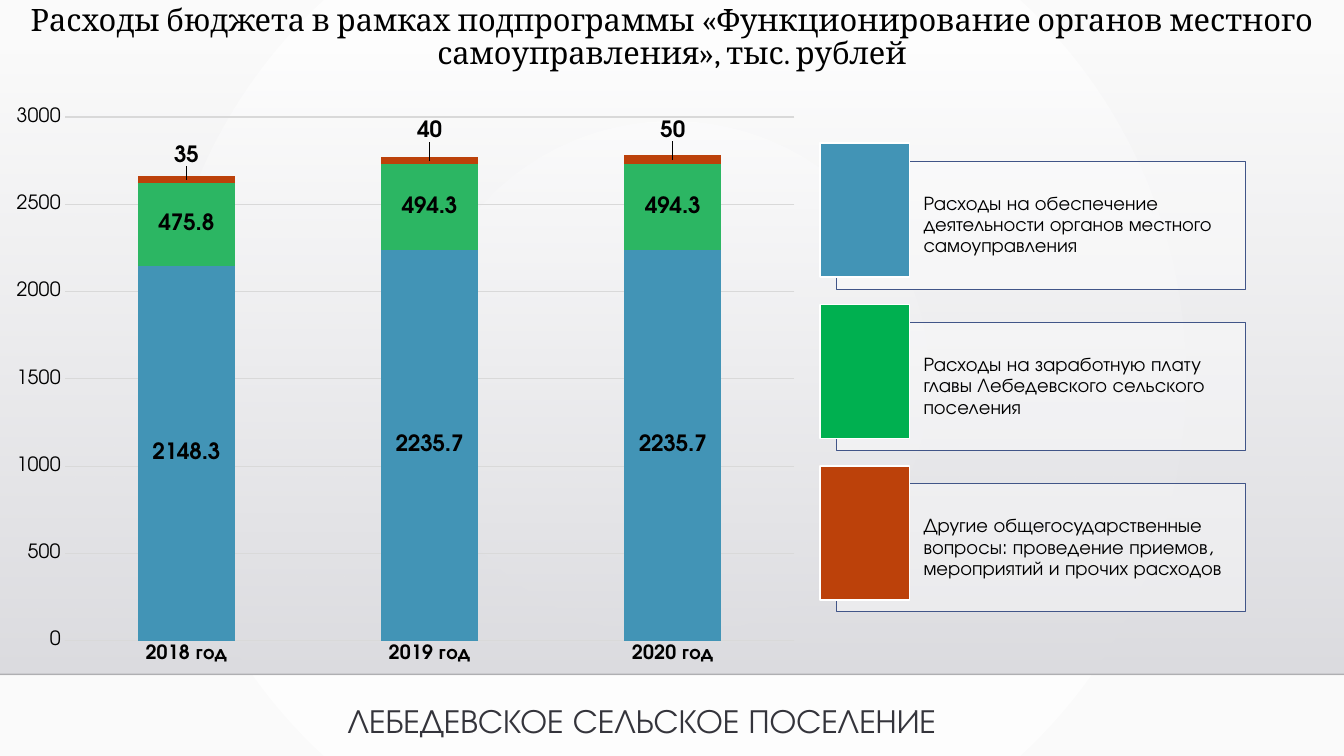
from pptx import Presentation, util as u
from pptx.chart.data import CategoryChartData
from pptx.dml.color import RGBColor
from pptx.enum import chart as ch, shapes as sh, text as tx
from pptx.oxml import parse_xml
from pptx.oxml.ns import nsdecls

TITLE = ("Расходы бюджета в рамках подпрограммы «Функционирование органов местного "
         "самоуправления», тыс. рублей")
FOOTER = "ЛЕБЕДЕВСКОЕ СЕЛЬСКОЕ ПОСЕЛЕНИЕ"
YEARS = ["2018 год", "2019 год", "2020 год"]
SERIES = [  # name, values, bar colour
    ("Series 1", (2148.3, 2235.7, 2235.7), "4294B6"),
    ("Series 2", (475.8, 494.3, 494.3), "2CB663"),
    ("Series 3", (35, 40, 50), "BC410A"),
]
TOP_LABEL_SHIFTS = (-0.04, -0.05, -0.05)  # share of chart height
PLOT_AREA = {"x": 0.08, "y": 0.035, "w": 0.9, "h": 0.902}
LEGEND = [
    ("Расходы на обеспечение деятельности органов местного самоуправления", "4294B6"),
    ("Расходы на заработную плату главы Лебедевского сельского поселения", "00B050"),
    ("Другие общегосударственные вопросы: проведение приемов, мероприятий и прочих расходов",
     "BC410A"),
]


class Theme:
    serif, sans = "Cambria", "TeX Gyre Adventor"
    black, white, footer = "000000", "FFFFFF", "34343B"
    grid, card_line, rule = "D9D9D9", "415588", "000001"
    title_size, footer_size, label_size, body_size = 22, 24, 16, 14


def set_all(target, **values):
    for name, value in values.items():
        setattr(target, name, value)


def style_font(font, size, color=Theme.black, name=Theme.sans, bold=False):
    set_all(font, size=u.Pt(size), name=name, bold=bold)
    font.color.rgb = RGBColor.from_string(color)


def paint(fill, color):
    fill.solid()
    fill.fore_color.rgb = RGBColor.from_string(color)


def stroke(line, color, width):
    paint(line.fill, color)
    line.width = u.Pt(width)


def set_alpha(element, xpath, percent):
    element.xpath(xpath)[0].append(
        parse_xml(f'<a:alpha {nsdecls("a")} val="{percent * 1000}"/>'))


def use_gradient(solid, stops, direction):
    """Swap a solid fill element for a gradient of (position, colour, opacity) stops."""
    marks = "".join(
        f'<a:gs pos="{pos * 1000}"><a:srgbClr val="{color}">'
        f'<a:alpha val="{opacity * 1000}"/></a:srgbClr></a:gs>'
        for pos, color, opacity in stops)
    gradient = parse_xml(f'<a:gradFill {nsdecls("a")} rotWithShape="1">'
                         f'<a:gsLst>{marks}</a:gsLst>{direction}</a:gradFill>')
    solid.getparent().replace(solid, gradient)


def manual_layout(**values):
    """Chart layout element; an inner plot area when it has a width."""
    inner = '<c:layoutTarget val="inner"/>' if "w" in values else ""
    modes = '<c:xMode val="edge"/><c:yMode val="edge"/>' if inner else ""
    sizes = "".join(f'<c:{key} val="{value}"/>' for key, value in values.items())
    return parse_xml(f'<c:layout {nsdecls("c")}><c:manualLayout>{inner}{modes}{sizes}'
                     '</c:manualLayout></c:layout>')


def add_box(slide, left, top, width, height, color):
    box = slide.shapes.add_shape(sh.MSO_SHAPE.RECTANGLE, *map(u.Inches, (left, top, width, height)))
    box.shadow.inherit = False
    paint(box.fill, color)
    return box


def add_backdrop(slide):
    paint(slide.background.fill, Theme.white)
    use_gradient(slide.element.xpath("p:cSld/p:bg/p:bgPr/a:solidFill")[0],
                 [(0, "FFFFFF", 100), (100, "FAFAFA", 100)],
                 '<a:path path="circle"><a:fillToRect l="50000" t="50000" r="50000" b="50000"/>'
                 '</a:path>')
    panel = add_box(slide, 0, 0.51, 13.33, 6.18, Theme.white)
    panel.line.fill.background()
    use_gradient(panel.element.xpath("p:spPr/a:solidFill")[0],
                 [(0, "DCDCE0", 0), (100, "DEDEE2", 100)], '<a:lin ang="5400000" scaled="0"/>')
    rule = slide.shapes.add_connector(sh.MSO_CONNECTOR.STRAIGHT,
                                      *map(u.Inches, (0, 6.69, 13.33, 6.69)))
    stroke(rule.line, Theme.rule, 1)
    set_alpha(rule.element, "p:spPr/a:ln/a:solidFill/a:srgbClr", 20)
    rule.element.spPr.append(parse_xml(f'<a:effectLst {nsdecls("a")}/>'))


def add_title(slide):
    title = slide.shapes.title
    set_all(title, left=0, top=0, width=u.Inches(13.33), height=u.Inches(0.96))
    slide.shapes.element.append(title.element)  # in front of the backdrop
    frame = title.text_frame
    set_all(frame, text=TITLE, word_wrap=True, vertical_anchor=tx.MSO_ANCHOR.TOP)
    para = frame.paragraphs[0]
    set_all(para, alignment=tx.PP_ALIGN.CENTER, line_spacing=0.9)
    style_font(para.runs[0].font, Theme.title_size, name=Theme.serif)


def add_footer(slide):
    box = slide.shapes.add_textbox(*map(u.Inches, (3.35, 6.89, 6.64, 0.5)))
    frame = box.text_frame
    set_all(frame, text=FOOTER, word_wrap=False, auto_size=tx.MSO_AUTO_SIZE.SHAPE_TO_FIT_TEXT)
    style_font(frame.paragraphs[0].runs[0].font, Theme.footer_size, Theme.footer)


def add_legend(slide):
    for row, (label, color) in enumerate(LEGEND):
        top = 1.6 + 1.6 * row
        card = add_box(slide, 8.3, top, 4.05, 1.27, Theme.white)
        set_alpha(card.element, "p:spPr/a:solidFill/a:srgbClr", 40)
        stroke(card.line, Theme.card_line, 0.75)
        frame = card.text_frame
        inset = u.Inches(0.06)
        set_all(frame, text=label, word_wrap=True, vertical_anchor=tx.MSO_ANCHOR.MIDDLE,
                margin_left=u.Inches(0.86), margin_right=inset,
                margin_top=inset, margin_bottom=inset)
        para = frame.paragraphs[0]
        set_all(para, alignment=tx.PP_ALIGN.LEFT, line_spacing=0.9)
        style_font(para.runs[0].font, Theme.body_size)
        swatch = add_box(slide, 8.13, top - 0.18, 0.89, 1.33, color)
        stroke(swatch.line, Theme.white, 1.25)


def style_axes(chart):
    years, amounts = chart.category_axis, chart.value_axis
    for axis, bold in ((years, True), (amounts, False)):
        set_all(axis, major_tick_mark=ch.XL_TICK_MARK.NONE, minor_tick_mark=ch.XL_TICK_MARK.NONE)
        style_font(axis.tick_labels.font, Theme.body_size, bold=bold)
    set_all(amounts, minimum_scale=0, maximum_scale=3000, major_unit=500)
    amounts.format.line.fill.background()
    for line in (years.format.line, amounts.major_gridlines.format.line):
        stroke(line, Theme.grid, 0.75)


def add_spending_chart(slide):
    data = CategoryChartData()
    data.categories = YEARS
    for name, values, _ in SERIES:
        data.add_series(name, values)
    chart = slide.shapes.add_chart(ch.XL_CHART_TYPE.COLUMN_STACKED,
                                   *map(u.Inches, (0, 0.96, 8.04, 5.76)), data).chart
    set_all(chart, has_legend=False, has_title=False)
    style_font(chart.font, Theme.body_size)
    style_axes(chart)
    plot = chart.plots[0]
    set_all(plot, gap_width=150, overlap=100, vary_by_categories=False)
    for series, (_, _, color) in zip(plot.series, SERIES):
        paint(series.format.fill, color)
        labels = series.data_labels
        set_all(labels, show_value=True, position=ch.XL_LABEL_POSITION.CENTER)
        style_font(labels.font, Theme.label_size, bold=True)

    top_series = plot.series[-1]
    for index, shift in enumerate(TOP_LABEL_SHIFTS):
        label = top_series.points[index].data_label
        style_font(label.font, Theme.label_size, bold=True)
        label.position = ch.XL_LABEL_POSITION.CENTER
    for mark, shift in zip(top_series.data_labels._element.xpath("c:dLbl"), TOP_LABEL_SHIFTS):
        mark.insert(1, manual_layout(x=0, y=shift))

    area = chart.element.xpath("c:chart/c:plotArea")[0]
    for old in area.xpath("c:layout"):
        area.remove(old)
    area.insert(0, manual_layout(**PLOT_AREA))


def main():
    deck = Presentation()
    set_all(deck, slide_width=u.Inches(13.33), slide_height=u.Inches(7.5))
    slide = deck.slides.add_slide(deck.slide_layouts[5])
    add_backdrop(slide)
    add_title(slide)
    add_footer(slide)
    add_legend(slide)
    add_spending_chart(slide)
    deck.save("out.pptx")


if __name__ == "__main__":
    main()
